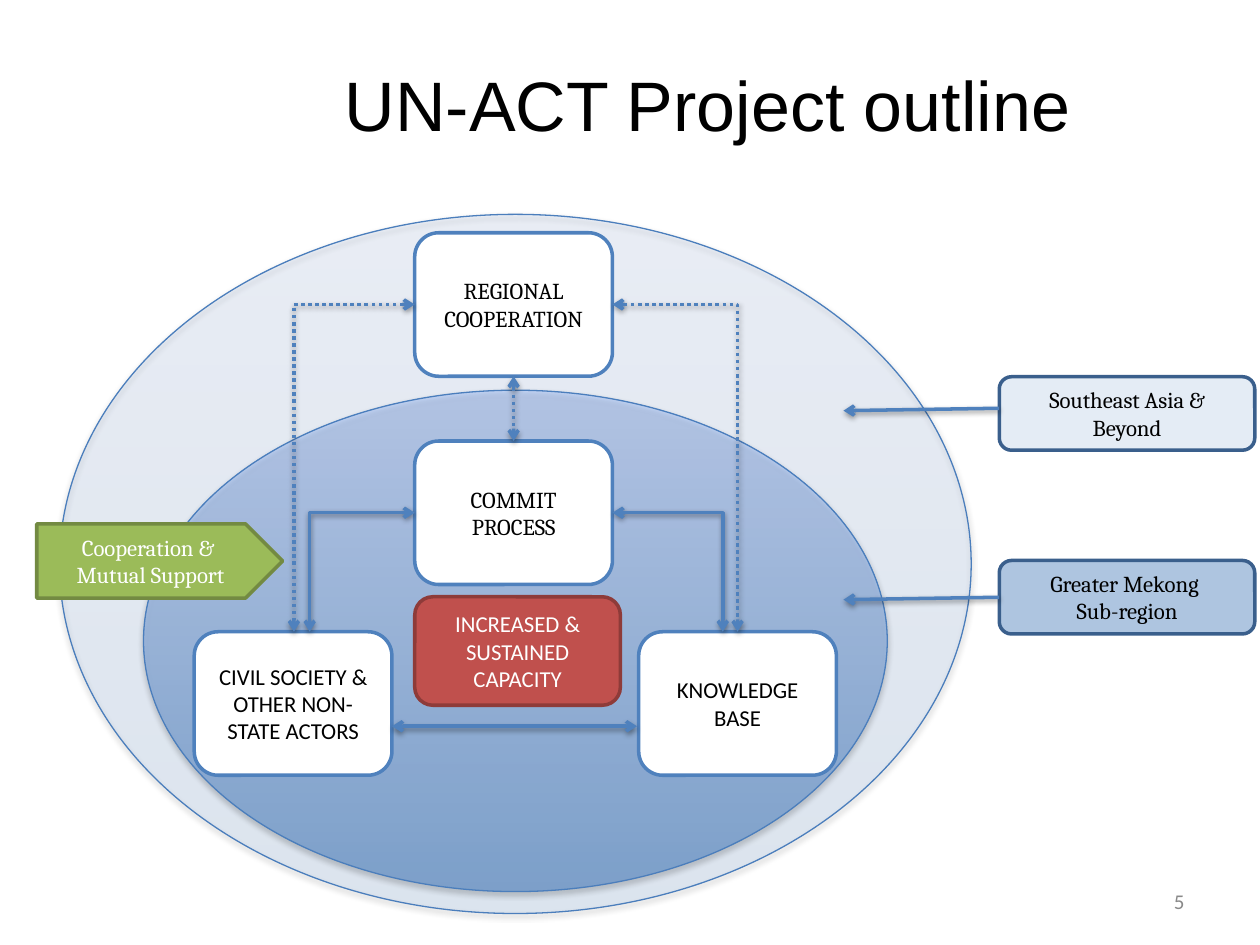
import pptx
import pptx.util
import pptx.dml.color
import pptx.enum.dml
import pptx.enum.shapes
import pptx.enum.text
import pptx.oxml
import pptx.oxml.ns

Pt = pptx.util.Pt
SHAPE = pptx.enum.shapes.MSO_SHAPE
CONNECTOR = pptx.enum.shapes.MSO_CONNECTOR
ALIGN = pptx.enum.text.PP_ALIGN
ANCHOR = pptx.enum.text.MSO_ANCHOR
qn = pptx.oxml.ns.qn
BLUE, BLACK, WHITE = "4F81BD", "000000", "FFFFFF"


def rgb(value):
    return pptx.dml.color.RGBColor.from_string(value)


def set_alpha(parent, percent):
    for color in parent.iter(qn("a:srgbClr")):
        pptx.oxml.ns  # namespace helpers are shared with qn
        color.append(pptx.oxml.parse_xml(
            f'<a:alpha {pptx.oxml.ns.nsdecls("a")} val="{percent * 1000}"/>'))


def add_shadow(props, opacity, distance):
    for old in props.findall(qn("a:effectLst")):
        props.remove(old)
    props.append(pptx.oxml.parse_xml(
        f'<a:effectLst {pptx.oxml.ns.nsdecls("a")}>'
        f'<a:outerShdw blurRad="{Pt(3.1)}" dist="{Pt(distance)}" dir="5400000" rotWithShape="0">'
        f'<a:srgbClr val="{BLACK}"><a:alpha val="{opacity * 1000}"/></a:srgbClr>'
        '</a:outerShdw></a:effectLst>'))


def write(frame, text, font, size, color, align):
    frame.text = text
    for paragraph in frame.paragraphs:
        paragraph.alignment = align
        for run in paragraph.runs:
            run.font.name = font
            run.font.size = Pt(size)
            run.font.color.rgb = rgb(color)


def add_ellipse(slide, box, opacity):
    ellipse = slide.shapes.add_shape(SHAPE.OVAL, *map(Pt, box))
    ellipse.fill.gradient()
    ellipse.fill.gradient_angle = 90
    for stop, color, position in zip(ellipse.fill.gradient_stops, ("3F80CE", "A4C4FF"), (0, 1)):
        stop.color.rgb = rgb(color)
        stop.position = position
    set_alpha(ellipse.fill._xPr.find(qn("a:gradFill")), opacity)
    ellipse.line.color.rgb = rgb("4B7EBC")
    ellipse.line.width = Pt(0.75)
    add_shadow(ellipse._element.spPr, 35, 1.8)


def add_label(slide, box, text, font="Cambria", fill=WHITE, line=BLUE, color=BLACK,
              opacity=100, kind=SHAPE.ROUNDED_RECTANGLE):
    label = slide.shapes.add_shape(kind, *map(Pt, box))
    label.shadow.inherit = False
    label.fill.solid()
    label.fill.fore_color.rgb = rgb(fill)
    if opacity < 100:
        set_alpha(label._element.spPr.find(qn("a:solidFill")), opacity)
    label.line.color.rgb = rgb(line)
    label.line.width = Pt(2)
    label.text_frame.word_wrap = True
    label.text_frame.vertical_anchor = ANCHOR.MIDDLE
    write(label.text_frame, text, font, 13, color, ALIGN.CENTER)


def add_arrow(slide, start, end, both=True, dotted=False, bent=False):
    kind = CONNECTOR.ELBOW if bent else CONNECTOR.STRAIGHT
    arrow = slide.shapes.add_connector(kind, *map(Pt, start + end))
    props = arrow._element.spPr
    if bent:  # one corner: sideways first, then down
        props.find(qn("a:prstGeom")).set("prst", "bentConnector2")
    arrow.line.color.rgb = rgb(BLUE)
    arrow.line.width = Pt(2)
    if dotted:
        arrow.line.dash_style = pptx.enum.dml.MSO_LINE.ROUND_DOT
    for tag in ("headEnd", "tailEnd") if both else ("tailEnd",):
        props.find(qn("a:ln")).append(pptx.oxml.parse_xml(
            f'<a:{tag} {pptx.oxml.ns.nsdecls("a")} type="arrow"/>'))
    add_shadow(props, 38, 1.6)


def add_text(slide, box, text, font, size, color, align, wrap):
    area = slide.shapes.add_textbox(*map(Pt, box))
    area.text_frame.word_wrap = wrap
    area.text_frame.vertical_anchor = ANCHOR.MIDDLE if wrap else ANCHOR.TOP
    write(area.text_frame, text, font, size, color, align)


def add_process(slide, box):
    """Four linked actors around the capacity goal."""
    left, top, width, height = box
    node_w, node_h = 113, 82
    center_x, right_x = left + 126, left + width - node_w
    commit_y, base_y = top + 119, top + height - node_h
    center_right, middle = center_x + node_w, center_x + node_w / 2

    # Actors
    add_label(slide, (center_x, commit_y, node_w, node_h), "COMMIT\nPROCESS")
    add_label(slide, (left, base_y, node_w, node_h),
              "CIVIL SOCIETY & OTHER NON-STATE ACTORS", "Calibri")
    add_label(slide, (right_x, base_y, node_w, node_h), "KNOWLEDGE\nBASE", "Calibri")
    add_label(slide, (center_x, top, node_w, node_h), "REGIONAL\nCOOPERATION")

    # Links between actors
    link_y = base_y + 54
    add_arrow(slide, (left + node_w, link_y), (right_x - 1, link_y))
    add_arrow(slide, (middle, top + node_h), (middle, commit_y), dotted=True)
    for node_y, left_foot, right_foot, dotted in (
            (top, left + 57, right_x + 56.5, True),
            (commit_y, left + 66, right_x + 48, False)):
        for side, foot in ((center_x, left_foot), (center_right, right_foot)):
            add_arrow(slide, (side, node_y + node_h / 2), (foot, base_y),
                      dotted=dotted, bent=True)

    # Goal
    add_label(slide, (center_x, base_y - 20, 117.5, 62), "INCREASED & SUSTAINED CAPACITY",
              "Calibri", "C0504D", "8E3B39", WHITE)


def add_regions(slide, box):
    """Region tags with arrows to their ellipses."""
    left, top, width, height = box
    tag_h = 42
    for tag_y, text, opacity, arrow_y in (
            (top + height - tag_h, "Greater Mekong \nSub-region", 46, 341.3),
            (top, "Southeast Asia & Beyond", 15, 233.3)):
        add_label(slide, (left, tag_y, width, tag_h), text, line="3A5F8C",
                  fill=BLUE, opacity=opacity)
        add_arrow(slide, (left, arrow_y), (left - 89, arrow_y + 1.4), both=False)


def main():
    deck = pptx.Presentation()
    deck.slide_width, deck.slide_height = Pt(720), Pt(540)
    slide = deck.slides.add_slide(deck.slide_layouts[6])

    # Page number
    add_text(slide, (516, 500.5, 168, 28.75), "5", "Calibri", 12, "898989", ALIGN.RIGHT, True)

    # Nested regions
    add_ellipse(slide, (34, 122.5, 521, 399.5), 13)
    add_ellipse(slide, (82, 223, 425, 286.5), 48)

    add_process(slide, (111, 133, 367, 310))
    add_regions(slide, (571, 215.3, 146, 147))
    add_label(slide, (21, 299.3, 140.5, 42.5), "Cooperation & \nMutual Support",
              fill="9BBB59", line="738A42", color=WHITE, kind=SHAPE.PENTAGON)

    # Title
    add_text(slide, (190, 31.7, 433.5, 55.5), "UN-ACT Project outline", "Arial", 40, BLACK,
             ALIGN.LEFT, False)
    deck.save("out.pptx")


if __name__ == "__main__":
    main()
